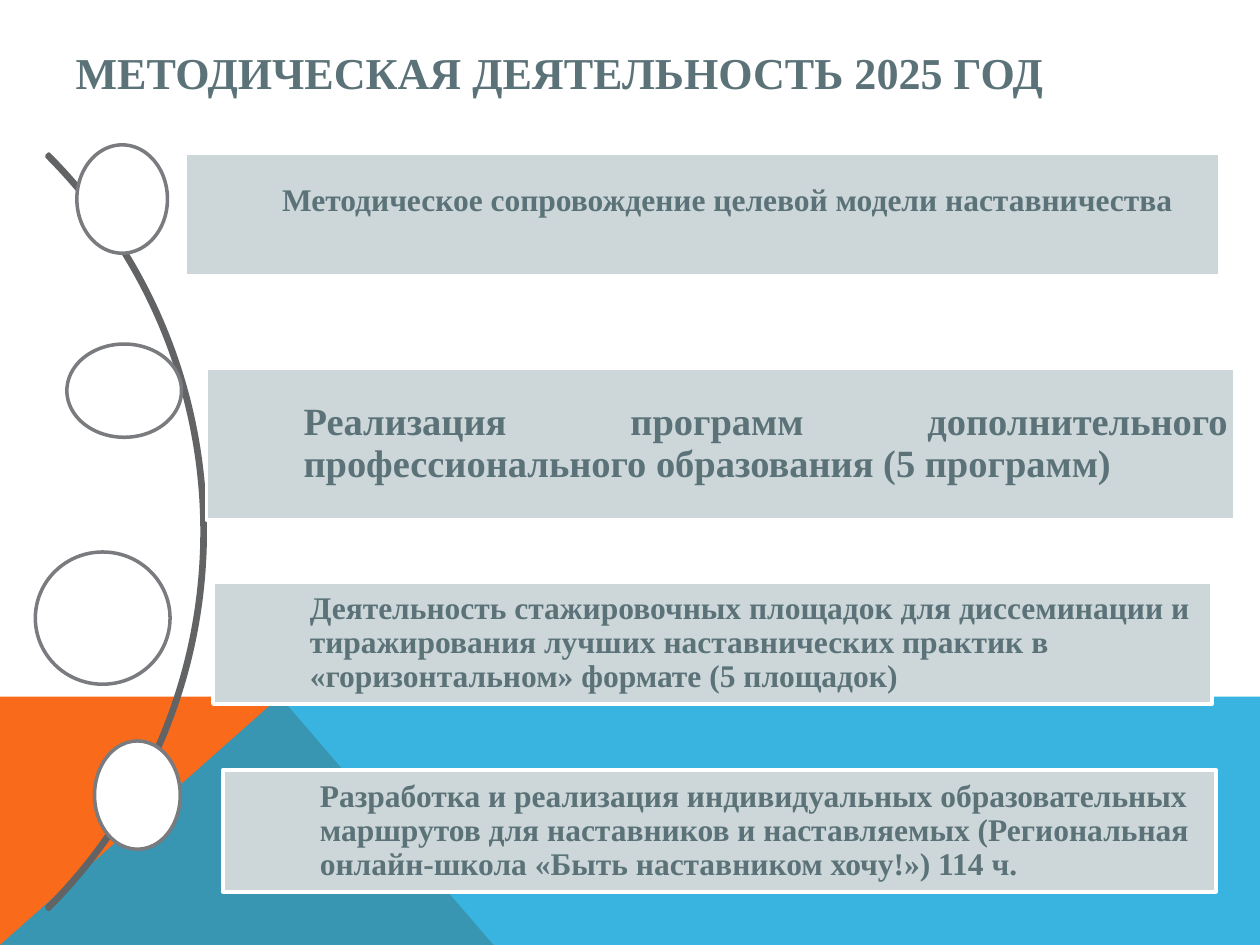
import pptx
import pptx.util
import pptx.dml.color
import pptx.enum.shapes
import pptx.enum.text
import lxml.etree

Pt = pptx.util.Pt
RGBColor = pptx.dml.color.RGBColor
MSO_SHAPE = pptx.enum.shapes.MSO_SHAPE
PP_ALIGN = pptx.enum.text.PP_ALIGN

WHITE = RGBColor(0xFF, 0xFF, 0xFF)
ORANGE = RGBColor(0xF9, 0x6A, 0x1B)
BLUE = RGBColor(0x08, 0xA1, 0xD9)
PANEL = RGBColor(0xCD, 0xD7, 0xD9)
TEXT = RGBColor(0x5B, 0x73, 0x78)
ARC = RGBColor(0x61, 0x63, 0x65)
RING = RGBColor(0x79, 0x7B, 0x7E)


def write_text(shape, text, size, align=PP_ALIGN.LEFT, line_spacing=0.9,
               insets=(7.2, 3.6, 7.2, 3.6)):
    """Insets run left, top, right, bottom, in points."""
    frame = shape.text_frame
    frame.word_wrap = True
    frame.auto_size = pptx.enum.text.MSO_AUTO_SIZE.NONE
    frame.vertical_anchor = pptx.enum.text.MSO_ANCHOR.MIDDLE
    frame.margin_left, frame.margin_top, frame.margin_right, frame.margin_bottom = map(Pt, insets)
    paragraph = frame.paragraphs[0]
    paragraph.alignment = align
    paragraph.line_spacing = line_spacing
    run = paragraph.add_run()
    run.text = text
    run.font.name = "Times New Roman"
    run.font.size = Pt(size)
    run.font.bold = True
    run.font.color.rgb = TEXT


def add_outlined(kind, box, fill, line):
    shape = slide.shapes.add_shape(kind, *map(Pt, box))
    shape.shadow.inherit = False
    if fill is None:
        shape.fill.background()
    else:
        shape.fill.solid()
        shape.fill.fore_color.rgb = fill
    shape.line.color.rgb = line
    shape.line.width = Pt(2)
    return shape


presentation = pptx.Presentation()
presentation.slide_width = Pt(720)
presentation.slide_height = Pt(540)
slide = presentation.slides.add_slide(presentation.slide_layouts[5])

# Coloured band along the bottom
bands = [
    (ORANGE, [(0, 540), (0, 397.5), (160.5, 397.5), (281.5, 540)]),
    (BLUE, [(0, 540), (160.5, 397.5), (720, 398), (720, 540)]),
]
for color, points in bands:
    builder = slide.shapes.build_freeform(*points[0], scale=Pt(1))
    builder.add_line_segments(points[1:], close=True)
    band = builder.convert_to_shape()
    band.shadow.inherit = False
    band.fill.solid()
    band.fill.fore_color.rgb = color
    band.line.fill.background()
    if color == BLUE:
        color_element = band.fill._xPr.find(".//" + pptx.oxml.ns.qn("a:srgbClr"))
        lxml.etree.SubElement(color_element, pptx.oxml.ns.qn("a:alpha"), val="80000")

title = slide.shapes.title
title.left, title.top, title.width, title.height = map(Pt, (36, 21.6, 648, 39))
write_text(title, "МЕТОДИЧЕСКАЯ ДЕЯТЕЛЬНОСТЬ 2025 ГОД", 25.2, line_spacing=1.0)

arc = add_outlined(MSO_SHAPE.BLOCK_ARC, (-493.2, -1.4, 610.5, 610.5), None, ARC)
for index, value in enumerate((189, 27, 0.003)):
    arc.adjustments[index] = value

# Text, size, alignment, bottom inset, panel box, ring box
items = [
    ("Методическое сопровождение целевой модели наставничества",
     18, PP_ALIGN.LEFT, 19,
     (105.8, 87.8, 591.1, 69.8), (43.9, 82.8, 51.8, 61.9)),
    ("Реализация программ дополнительного профессионального образования (5 программ)",
     22, PP_ALIGN.JUSTIFY, 4,
     (118.1, 210.2, 587.5, 87.1), (38.2, 196.6, 65.5, 53.3)),
    ("Деятельность стажировочных площадок для диссеминации и тиражирования лучших "
     "наставнических практик в «горизонтальном» формате (5 площадок)",
     18, PP_ALIGN.LEFT, 4,
     (121.7, 332.6, 571, 69.8), (20.2, 315.4, 77, 75.6)),
    ("Разработка и реализация индивидуальных образовательных маршрутов для наставников "
     "и наставляемых (Региональная онлайн-школа «Быть наставником хочу!») 114 ч.",
     18, PP_ALIGN.LEFT, 4,
     (127.4, 439.9, 567.4, 69.8), (54, 423.4, 49, 61.9)),
]
for text, size, align, bottom_inset, panel_box, ring_box in items:
    panel = add_outlined(MSO_SHAPE.RECTANGLE, panel_box, PANEL, WHITE)
    write_text(panel, text, size, align=align, insets=(55.4, 4, 4, bottom_inset))
    add_outlined(MSO_SHAPE.OVAL, ring_box, WHITE, RING)

presentation.save("out.pptx")
